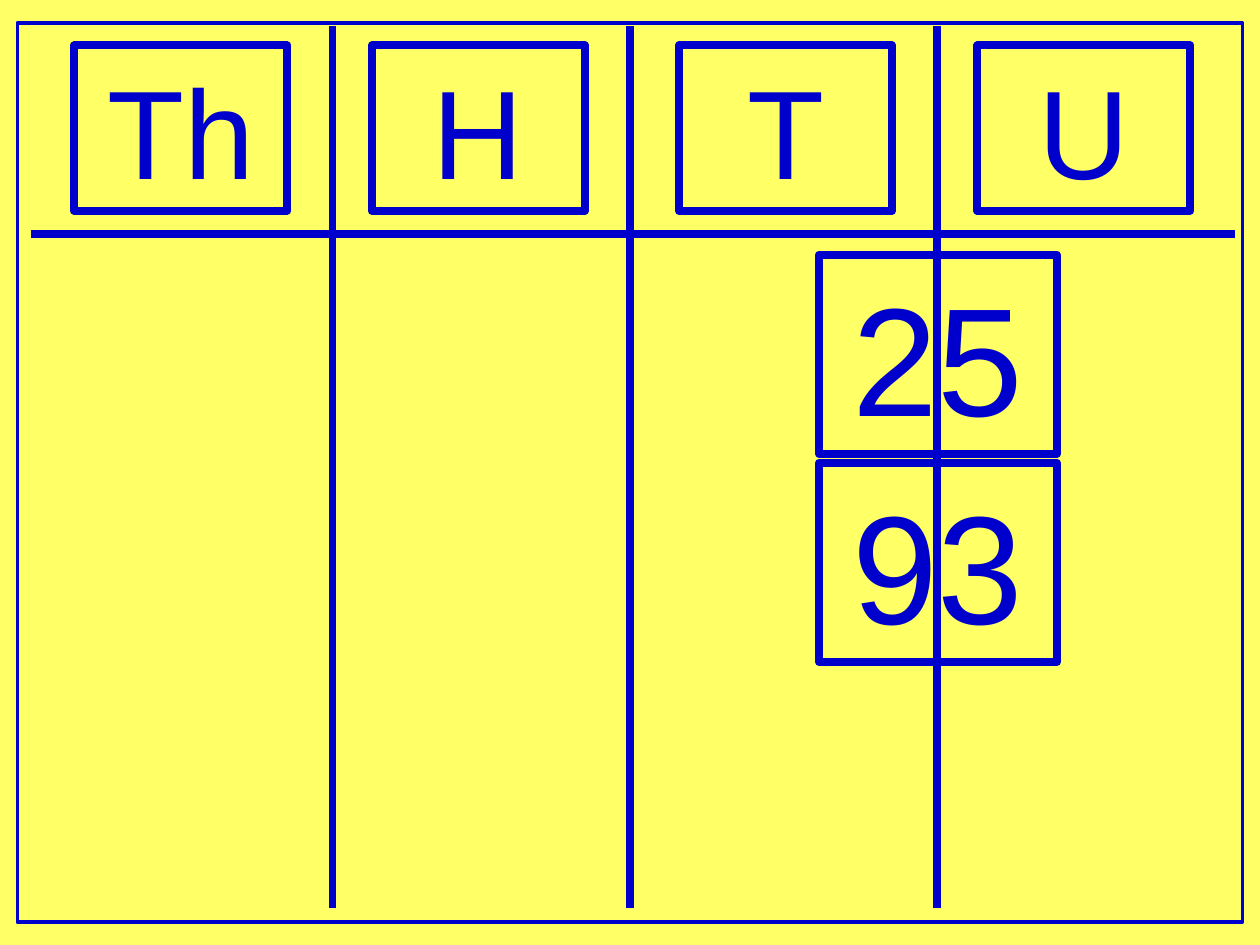
from lxml.etree import SubElement
from pptx import Presentation
from pptx.dml.color import RGBColor
from pptx.enum.shapes import MSO_CONNECTOR as Connector, MSO_SHAPE as Shape
from pptx.enum.text import MSO_ANCHOR as Anchor, MSO_AUTO_SIZE as AutoSize, PP_ALIGN as Align
from pptx.oxml.ns import qn
from pptx.util import Pt

YELLOW = RGBColor(0xFF, 0xFF, 0x66)
BLUE = RGBColor(0x00, 0x00, 0xCC)
THIN, THICK = 2, 4.5

HEADINGS = {"Th": 42.5, "H": 212.5, "T": 388, "U": 558.5}
DIVIDERS = (190, 360, 535.5)
NUMBERS = ("25", "93")
NUMBER_TOP, NUMBER_STEP = 145.5, 119


class PlaceValueSlide:
    FONT = {"name": "Arial"}
    FRAME = {
        "word_wrap": False,
        "auto_size": AutoSize.NONE,
        "vertical_anchor": Anchor.BOTTOM,
    }

    def __init__(self, presentation):
        self.slide = presentation.slides.add_slide(presentation.slide_layouts[6])
        background = self.slide.background.fill
        background.solid()
        background.fore_color.rgb = YELLOW

    def outline(self, shape, weight):
        shape.line.color.rgb = BLUE
        shape.line.width = Pt(weight)

    def box(self, left, top, width, height, weight):
        shape = self.slide.shapes.add_shape(
            Shape.RECTANGLE, Pt(left), Pt(top), Pt(width), Pt(height))
        shape.shadow.inherit = False
        shape.fill.background()
        self.outline(shape, weight)
        SubElement(shape.line._get_or_add_ln(), qn("a:round"))
        return shape

    def card(self, text, left, top, width, height, size):
        frame = self.box(left, top, width, height, THICK).text_frame
        for name, value in self.FRAME.items():
            setattr(frame, name, value)
        paragraph = frame.paragraphs[0]
        paragraph.alignment = Align.CENTER
        run = paragraph.add_run()
        run.text = text
        for name, value in {**self.FONT, "size": Pt(size)}.items():
            setattr(run.font, name, value)
        run.font.color.rgb = BLUE

    def rule(self, x1, y1, x2, y2):
        line = self.slide.shapes.add_connector(
            Connector.STRAIGHT, Pt(x1), Pt(y1), Pt(x2), Pt(y2))
        self.outline(line, THICK)
        SubElement(line._element.spPr, qn("a:effectLst"))


def main():
    presentation = Presentation()
    presentation.slide_width, presentation.slide_height = Pt(720), Pt(540)
    chart = PlaceValueSlide(presentation)

    chart.box(10, 13, 700, 514, THIN)
    chart.rule(17.5, 133.75, 705.5, 133.75)
    for x in DIVIDERS:
        chart.rule(x, 519, x, 15)
    for heading, left in HEADINGS.items():
        chart.card(heading, left, 26, 121.75, 94.5, 72)
    for row, number in enumerate(NUMBERS):
        chart.card(number, 468, NUMBER_TOP + row * NUMBER_STEP, 136, 113.75, 88)

    presentation.save("out.pptx")


if __name__ == "__main__":
    main()
